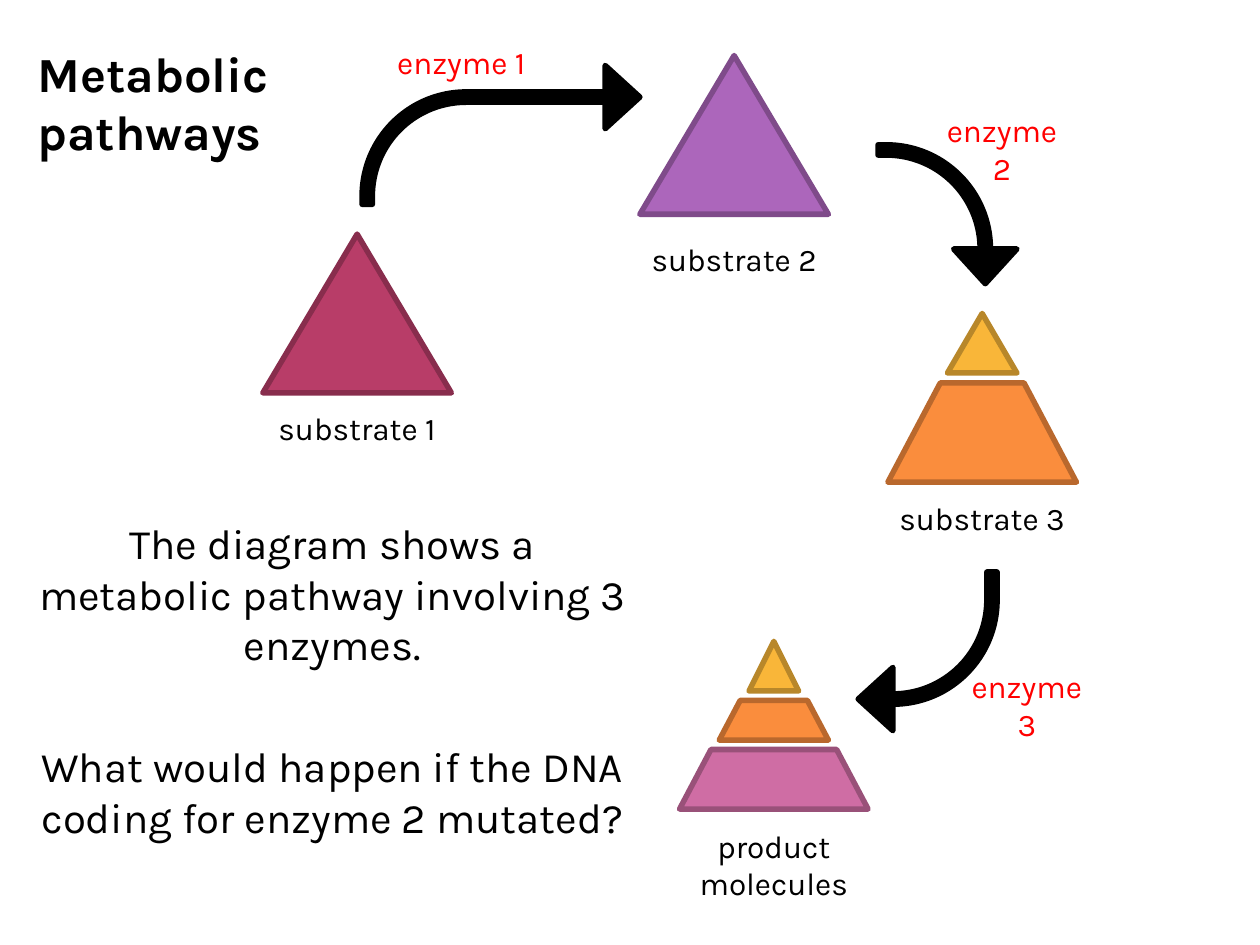
from dataclasses import dataclass

from lxml.etree import SubElement
from pptx import Presentation
from pptx.dml.color import RGBColor as Rgb
from pptx.enum.shapes import MSO_SHAPE as Kind
from pptx.enum.text import MSO_ANCHOR as Anchor, MSO_AUTO_SIZE as Fit, PP_ALIGN as Align
from pptx.oxml.ns import qn
from pptx.util import Cm, Pt


@dataclass(frozen=True)
class Theme:
    font: str = "Karla"
    ink: str = "000000"
    red: str = "FF0000"
    ruby: str = "B83D68"
    plum: str = "AC66BB"
    gold: str = "F9B639"
    orange: str = "FA8D3D"
    pink: str = "CF6DA4"
    title: int = 28
    body: int = 24
    label: int = 18
    line: float = 3.15
    shade: float = 0.74


@dataclass(frozen=True)
class Box:
    """Left, top, width and height in centimetres."""
    x: float
    y: float
    w: float
    h: float


@dataclass(frozen=True)
class Part:
    kind: Kind
    box: Box
    fill: str
    adj: tuple = ()
    turn: int = 0


@dataclass(frozen=True)
class Label:
    text: str
    box: Box
    color: str


LOOK = Theme()
SLOPE = (0.528,)
BEND = (0.074, 0.228, 0.25, 0.75)
TRI, TRAP, ARROW = Kind.ISOSCELES_TRIANGLE, Kind.TRAPEZOID, Kind.BENT_ARROW

PARTS = [
    # Substrates 1 and 2
    Part(TRI, Box(5.3, 4.72, 3.8, 3.2), LOOK.ruby),
    Part(TRI, Box(12.9, 1.12, 3.8, 3.2), LOOK.plum),
    # Substrate 3
    Part(TRI, Box(19.1, 6.32, 1.4, 1.2), LOOK.gold),
    Part(TRAP, Box(17.9, 7.72, 3.8, 2), LOOK.orange, SLOPE),
    # Product molecules
    Part(TRI, Box(15.1, 12.93, 1, 1), LOOK.gold),
    Part(TRAP, Box(14.5, 14.12, 2.2, 0.8), LOOK.orange, SLOPE),
    Part(TRAP, Box(13.7, 15.11, 3.8, 1.2), LOOK.pink, SLOPE),
    # Reaction arrows
    Part(ARROW, Box(7.3, 1.32, 5.6, 2.8), LOOK.ink, BEND),
    Part(ARROW, Box(17.7, 2.92, 2.8, 2.8), LOOK.ink, BEND, 90),
    Part(ARROW, Box(17.3, 11.53, 2.8, 3.2), LOOK.ink, BEND, 180),
]

LABELS = [
    Label("substrate 1", Box(4.7, 8.13, 5, 1.02), LOOK.ink),
    Label("substrate 2", Box(12.3, 4.72, 5, 1.02), LOOK.ink),
    Label("substrate 3", Box(17.3, 9.93, 5, 1.02), LOOK.ink),
    Label("product molecules", Box(13.1, 16.54, 5, 1.8), LOOK.ink),
    Label("enzyme 1", Box(6.9, 0.74, 4.8, 1.02), LOOK.red),
    Label("enzyme 2", Box(18.7, 2.12, 3, 1.8), LOOK.red),
    Label("enzyme 3", Box(19.1, 13.33, 3.2, 1.8), LOOK.red),
]

BODY = [
    "The diagram shows a metabolic pathway involving 3 enzymes.",
    "What would happen if the DNA coding for enzyme 2 mutated?",
]


def place(box: Box) -> tuple:
    return Cm(box.x), Cm(box.y), Cm(box.w), Cm(box.h)


def darken(color: str) -> Rgb:
    return Rgb(*(round(v * LOOK.shade) for v in Rgb.from_string(color)))


def draw(slide, part: Part) -> None:
    shape = slide.shapes.add_shape(part.kind, *place(part.box))
    shape.shadow.inherit = False
    for i, val in enumerate(part.adj):
        shape.adjustments[i] = val
    shape.rotation = part.turn
    shape.fill.solid()
    shape.fill.fore_color.rgb = Rgb.from_string(part.fill)
    shape.line.color.rgb = darken(part.fill)
    shape.line.width = Pt(LOOK.line)


def write(para, text: str, size: int, color: str, align: Align, bold: bool = False) -> None:
    para.alignment = align
    run = para.add_run()
    run.text = text
    font = run.font
    font.name, font.size, font.bold = LOOK.font, Pt(size), bold
    font.color.rgb = Rgb.from_string(color)


def note(slide, label: Label) -> None:
    frame = slide.shapes.add_textbox(*place(label.box)).text_frame
    frame.word_wrap = True
    write(frame.paragraphs[0], label.text, LOOK.label, label.color, Align.CENTER)


def settle(holder, box: Box):
    """Move a placeholder and return its top-aligned text frame."""
    holder.left, holder.top, holder.width, holder.height = place(box)
    frame = holder.text_frame
    frame.word_wrap = True
    frame.auto_size = Fit.NONE
    frame.vertical_anchor = Anchor.TOP
    return frame


def main() -> None:
    deck = Presentation()
    deck.slide_width, deck.slide_height = Cm(25.4), Cm(19.05)
    slide = deck.slides.add_slide(deck.slide_layouts[1])

    # Diagram
    for part in PARTS:
        draw(slide, part)
    for label in LABELS:
        note(slide, label)

    # Title
    frame = settle(slide.shapes.title, Box(0.5, 0.74, 5.6, 2.64))
    write(frame.paragraphs[0], "Metabolic pathways", LOOK.title, LOOK.ink, Align.LEFT, True)

    # Body text without bullets
    frame = settle(slide.placeholders[1], Box(0.5, 10.31, 12.4, 8))
    for i, text in enumerate(BODY):
        para = frame.add_paragraph() if i else frame.paragraphs[0]
        props = para._p.get_or_add_pPr()
        props.set("marL", "0")
        props.set("indent", "0")
        SubElement(props, qn("a:buNone"))
        para.space_before = Pt(41 if i else 0)
        write(para, text, LOOK.body, LOOK.ink, Align.CENTER)

    deck.save("out.pptx")


if __name__ == "__main__":
    main()
